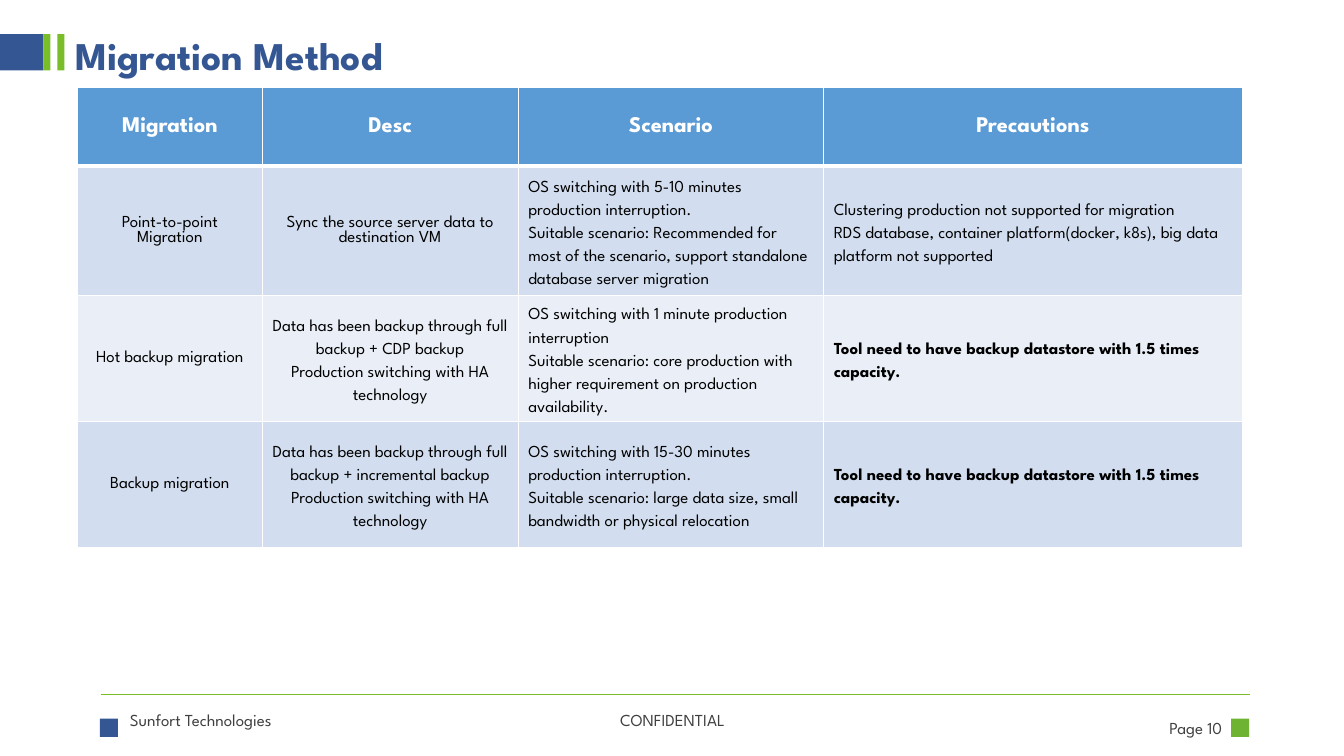
from pptx import Presentation
from pptx.dml.color import RGBColor
from pptx.enum.shapes import MSO_CONNECTOR, MSO_SHAPE
from pptx.enum.text import MSO_ANCHOR as ANCHOR, MSO_AUTO_SIZE, PP_ALIGN as ALIGN
from pptx.oxml import parse_xml
from pptx.oxml.ns import nsdecls
from pptx.util import Inches, Pt

FONT = "League Spartan"
BLUE, GREEN, GRAY = "345692", "79BD28", "404040"


def color(value):
    return RGBColor.from_string(value)


def write(frame, lines, size, text_color, bold=False, align=ALIGN.LEFT, spacing=1.0):
    """Fill a text frame with one paragraph per line, all formatted alike."""
    frame.word_wrap = True
    for index, line in enumerate(lines):
        paragraph = frame.add_paragraph() if index else frame.paragraphs[0]
        paragraph.text = line
        layout = {"alignment": align, "line_spacing": spacing, "space_before": Pt(0)}
        for name, value in layout.items():
            setattr(paragraph, name, value)
        for name, value in {"name": FONT, "size": Pt(size), "bold": bold}.items():
            setattr(paragraph.font, name, value)
        paragraph.font.color.rgb = color(text_color)


presentation = Presentation()
presentation.slide_width, presentation.slide_height = Inches(13.33), Inches(7.5)
slide = presentation.slides.add_slide(presentation.slide_layouts[5])

# Heading and footer marks
marks = [
    (12.21, 7.13, 0.18, 0.18, "6FB332"),
    (0.99, 7.13, 0.18, 0.18, BLUE),
    (0, 0.34, 0.43, 0.36, BLUE),
    (0.57, 0.34, 0.07, 0.36, GREEN),
    (0.43, 0.34, 0.07, 0.36, GREEN),
]
for *box, fill in marks:
    mark = slide.shapes.add_shape(MSO_SHAPE.RECTANGLE, *map(Inches, box))
    mark.shadow.inherit = False
    mark.fill.solid()
    mark.fill.fore_color.rgb = color(fill)
    mark.line.fill.background()

rule = slide.shapes.add_connector(
    MSO_CONNECTOR.STRAIGHT, Inches(1), Inches(6.89), Inches(12.4), Inches(6.89)
)
rule.line.color.rgb = color(GREEN)
rule.line.width = Pt(1)
rule._element.spPr.append(parse_xml(f"<a:effectLst {nsdecls('a')}/>"))

# Title
title = slide.shapes.title
title.left, title.top, title.width, title.height = map(Inches, (0.65, 0.31, 3.88, 0.47))
title.text_frame.auto_size = MSO_AUTO_SIZE.NONE
title.text_frame.vertical_anchor = ANCHOR.TOP
title.text_frame.margin_top = Inches(0.05)
write(title.text_frame, ["Migration Method"], 28, BLUE, bold=True, spacing=0.9)

# Migration table: each cell is a list of paragraphs
switching = "Production switching with HA technology"
capacity = ["Tool need to have backup datastore with 1.5 times capacity."]
rows = [
    [["Migration"], ["Desc"], ["Scenario"], ["Precautions"]],
    [
        ["Point-to-point Migration"],
        ["Sync the source server data to destination VM"],
        ["OS switching with 5-10 minutes production interruption.",
         "Suitable scenario: Recommended for most of the scenario, "
         "support standalone database server migration"],
        ["Clustering production not supported for migration",
         "RDS database, container platform(docker, k8s), big data platform not supported"],
    ],
    [
        ["Hot backup migration"],
        ["Data has been backup through full backup + CDP backup", switching],
        ["OS switching with 1 minute production interruption",
         "Suitable scenario: core production with higher requirement "
         "on production availability."],
        capacity,
    ],
    [
        ["Backup migration"],
        ["Data has been backup through full backup + incremental backup", switching],
        ["OS switching with 15-30 minutes production interruption.",
         "Suitable scenario: large data size, small bandwidth or physical relocation"],
        capacity,
    ],
]
column_widths = [1.83, 2.54, 3.03, 4.15]
row_heights = [0.78, 1.28, 1.25, 1.25]
row_fills = ["5B9BD5", "D2DEEF", "EAEFF7", "D2DEEF"]

table = slide.shapes.add_table(
    len(rows), len(column_widths), Inches(0.77), Inches(0.87),
    Inches(sum(column_widths)), Inches(sum(row_heights)),
).table
table.horz_banding = False
for column, width in zip(table.columns, column_widths):
    column.width = Inches(width)

for row_index, row in enumerate(rows):
    table.rows[row_index].height = Inches(row_heights[row_index])
    header = row_index == 0
    edges = {"lnL": 1, "lnR": 1, "lnT": 3 if row_index == 1 else 1, "lnB": 3 if header else 1}
    for column_index, lines in enumerate(row):
        cell = table.cell(row_index, column_index)
        cell.vertical_anchor = ANCHOR.MIDDLE
        properties = cell._tc.get_or_add_tcPr()
        for edge, width in edges.items():
            properties.append(parse_xml(
                f'<a:{edge} {nsdecls("a")} w="{Pt(width)}"><a:solidFill>'
                f'<a:srgbClr val="FFFFFF"/></a:solidFill></a:{edge}>'
            ))
        cell.fill.solid()
        cell.fill.fore_color.rgb = color(row_fills[row_index])
        single = header or column_index == 0 or (row_index, column_index) == (1, 1)
        write(
            cell.text_frame, lines,
            size=16 if header else 12,
            text_color="FFFFFF" if header else "000000",
            bold=header or lines is capacity,
            align=ALIGN.CENTER if header or column_index < 2 else ALIGN.LEFT,
            spacing=1.0 if single else 1.5,
        )

# Footer
footers = [
    ("Sunfort Technologies", 1.19, 3, ALIGN.LEFT, ANCHOR.TOP, 0.02),
    ("CONFIDENTIAL", 4.42, 4.5, ALIGN.CENTER, ANCHOR.TOP, 0.02),
    ("Page 10", 9.22, 3, ALIGN.RIGHT, ANCHOR.MIDDLE, 0.05),
]
for text, left, width, align, anchor, margin_top in footers:
    footer = slide.shapes.add_textbox(Inches(left), Inches(7.02), Inches(width), Inches(0.4))
    footer.text_frame.vertical_anchor = anchor
    footer.text_frame.margin_top = Inches(margin_top)
    write(footer.text_frame, [text], 12, GRAY, align=align)

presentation.save("out.pptx")
